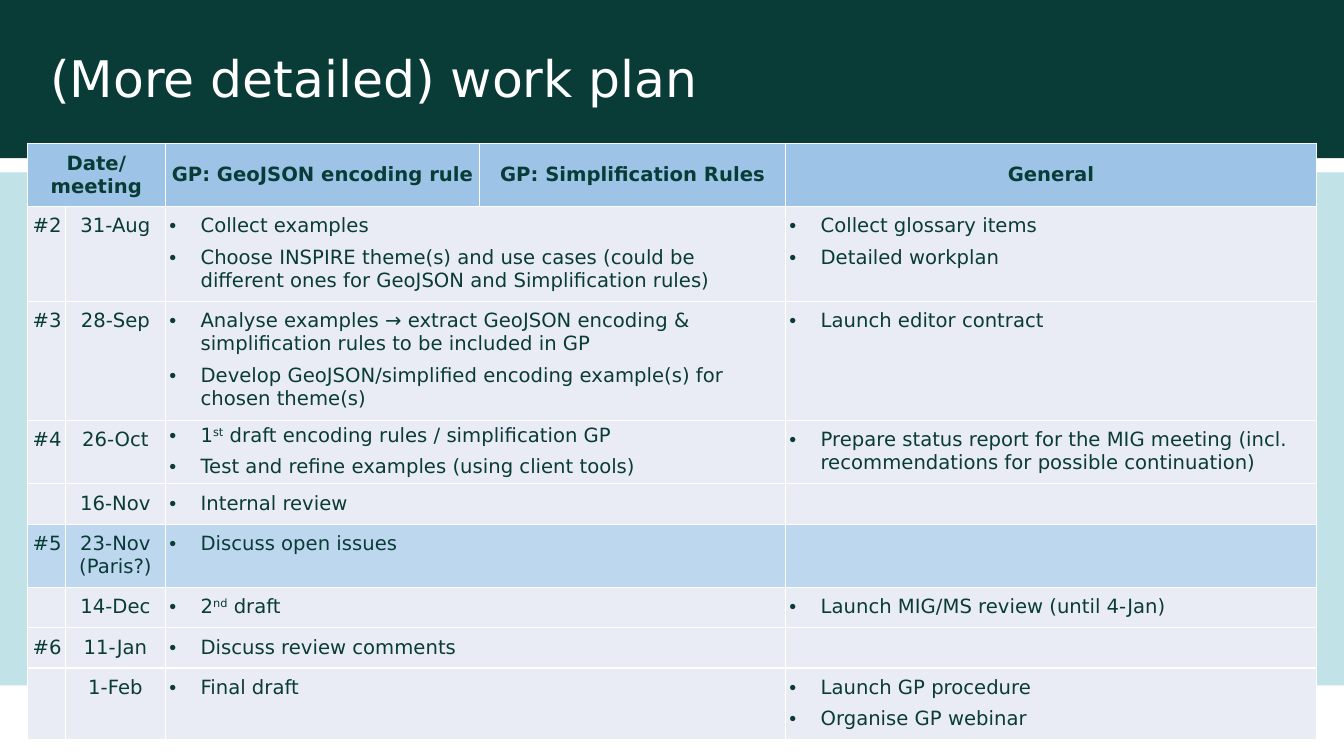
from lxml import etree
from pptx import Presentation
from pptx.dml.color import RGBColor
from pptx.enum.shapes import MSO_SHAPE
from pptx.enum.text import MSO_ANCHOR, PP_ALIGN
from pptx.oxml.ns import qn
from pptx.util import Inches, Pt

RECT = MSO_SHAPE.RECTANGLE
MIDDLE, TOP = MSO_ANCHOR.MIDDLE, MSO_ANCHOR.TOP
LEFT, CENTER, RIGHT = PP_ALIGN.LEFT, PP_ALIGN.CENTER, PP_ALIGN.RIGHT
GREEN = RGBColor(0x09, 0x3B, 0x37)
AQUA = RGBColor(0xC1, 0xE3, 0xE8)
WHITE = RGBColor(0xFF, 0xFF, 0xFF)
BLUE = RGBColor(0x9D, 0xC3, 0xE6)
SKY = RGBColor(0xBD, 0xD7, 0xEE)
PALE = RGBColor(0xE9, 0xEB, 0xF5)
FONT = "DejaVu Sans"
WIDTH = 13.33
COLS = [0.38, 0.99, 3.12, 3.03, 5.27]
HEADS = ["Date/ meeting", "", "GP: GeoJSON encoding rule", "GP: Simplification Rules", "General"]
PLAN = [
    (0.92, "#2", "31-Aug",
     ["Collect examples",
      "Choose INSPIRE theme(s) and use cases (could be different ones for GeoJSON and Simplification rules)"],
     ["Collect glossary items", "Detailed workplan"]),
    (1.16, "#3", "28-Sep",
     ["Analyse examples → extract GeoJSON encoding & simplification rules to be included in GP",
      "Develop GeoJSON/simplified encoding example(s) for chosen theme(s)"],
     ["Launch editor contract"]),
    (0.62, "#4", "26-Oct",
     ["1^st^ draft encoding rules / simplification GP", "Test and refine examples (using client tools)"],
     ["Prepare status report for the MIG meeting (incl. recommendations for possible continuation)"]),
    (0.39, "", "16-Nov", ["Internal review"], []),
    (0.62, "#5", "23-Nov (Paris?)", ["Discuss open issues"], []),
    (0.39, "", "14-Dec", ["2^nd^ draft"], ["Launch MIG/MS review (until 4-Jan)"]),
    (0.39, "#6", "11-Jan", ["Discuss review comments"], []),
    (0.69, "", "1-Feb", ["Final draft"], ["Launch GP procedure", "Organise GP webinar"]),
]
HEAD_HIGH = 0.62
TIGHT, MARKED = "#4", "#5"


def add_band(slide, left, top, width, height, color):
    """Draw a plain filled band."""
    band = slide.shapes.add_shape(RECT, Inches(left), Inches(top), Inches(width), Inches(height))
    band.shadow.inherit = False
    band.fill.solid()
    band.fill.fore_color.rgb = color
    band.line.fill.background()


def style_run(run, size, color, bold=False):
    """Set the font of a run."""
    run.font.name = FONT
    run.font.size = Pt(size)
    run.font.color.rgb = color
    run.font.bold = bold


def add_title(slide, left, top, width, height):
    """Write the slide title in the given box."""
    frame = slide.shapes.add_textbox(Inches(left), Inches(top), Inches(width), Inches(height)).text_frame
    frame.word_wrap = True
    frame.text = "(More detailed) work plan"
    frame.paragraphs[0].line_spacing = 0.9
    style_run(frame.paragraphs[0].runs[0], 36, WHITE)


def add_bullet(para):
    """Give a paragraph a hanging bullet."""
    props = para._p.get_or_add_pPr()
    props.set("marL", str(Inches(0.31)))
    props.set("indent", str(-Inches(0.31)))
    etree.SubElement(props, qn("a:buFont")).set("typeface", "Arial")
    etree.SubElement(props, qn("a:buChar")).set("char", "•")


def paint_cell(cell, color):
    """Fill a cell and give it thin white borders."""
    props = cell._tc.get_or_add_tcPr()
    for side in ("lnL", "lnR", "lnT", "lnB"):
        line = etree.SubElement(props, qn("a:" + side), w=str(Pt(1)))
        fill = etree.SubElement(line, qn("a:solidFill"))
        etree.SubElement(fill, qn("a:srgbClr")).set("val", str(WHITE))
    cell.fill.solid()
    cell.fill.fore_color.rgb = color


def write_cell(cell, lines, align, bold=False, inset=0.08, bullet=False):
    """Write lines in a cell, with text between carets raised."""
    cell.margin_left = cell.margin_right = Inches(0.04)
    cell.margin_top = cell.margin_bottom = Inches(inset)
    cell.vertical_anchor = MIDDLE if bold else TOP
    frame = cell.text_frame
    for i, line in enumerate(lines):
        para = frame.add_paragraph() if i else frame.paragraphs[0]
        para.alignment = align
        if i:
            para.space_before = Pt(6)
        if bullet:
            add_bullet(para)
        for j, part in enumerate(line.split("^")):
            run = para.add_run()
            run.text = part
            style_run(run, 14, GREEN, bold)
            if j % 2:
                run._r.get_or_add_rPr().set("baseline", "30000")


def add_plan(slide, left, top):
    """Build the work plan table from its top left corner."""
    highs = [HEAD_HIGH] + [row[0] for row in PLAN]
    frame = slide.shapes.add_table(len(highs), len(COLS), Inches(left), Inches(top),
                                   Inches(sum(COLS)), Inches(sum(highs)))
    table = frame.table
    for col, width in zip(table.columns, COLS):
        col.width = Inches(width)
    for row, high in zip(table.rows, highs):
        row.height = Inches(high)
    for c, head in enumerate(HEADS):
        paint_cell(table.cell(0, c), BLUE)
        if head:
            write_cell(table.cell(0, c), [head], CENTER, bold=True)
    table.cell(0, 0).merge(table.cell(0, 1))
    for r, (_, mark, date, tasks, notes) in enumerate(PLAN, 1):
        cells = [table.cell(r, c) for c in range(len(COLS))]
        for cell in cells:
            paint_cell(cell, SKY if mark == MARKED else PALE)
        if mark:
            write_cell(cells[0], [mark], RIGHT)
        write_cell(cells[1], [date], CENTER)
        write_cell(cells[2], tasks, LEFT, inset=0.04 if mark == TIGHT else 0.08, bullet=True)
        if notes:
            write_cell(cells[4], notes, LEFT, bullet=True)
        cells[2].merge(cells[3])


def main():
    """Build and save the slide."""
    deck = Presentation()
    deck.slide_width, deck.slide_height = Inches(WIDTH), Inches(7.5)
    slide = deck.slides.add_slide(deck.slide_layouts[6])
    add_band(slide, 0, 1.71, WIDTH, 5.09, AQUA)
    add_band(slide, 0, 0, WIDTH, 1.57, GREEN)
    add_title(slide, 0.4, 0.49, 12.55, 1.09)
    add_plan(slide, 0.27, 1.42)
    deck.save("out.pptx")


if __name__ == "__main__":
    main()
